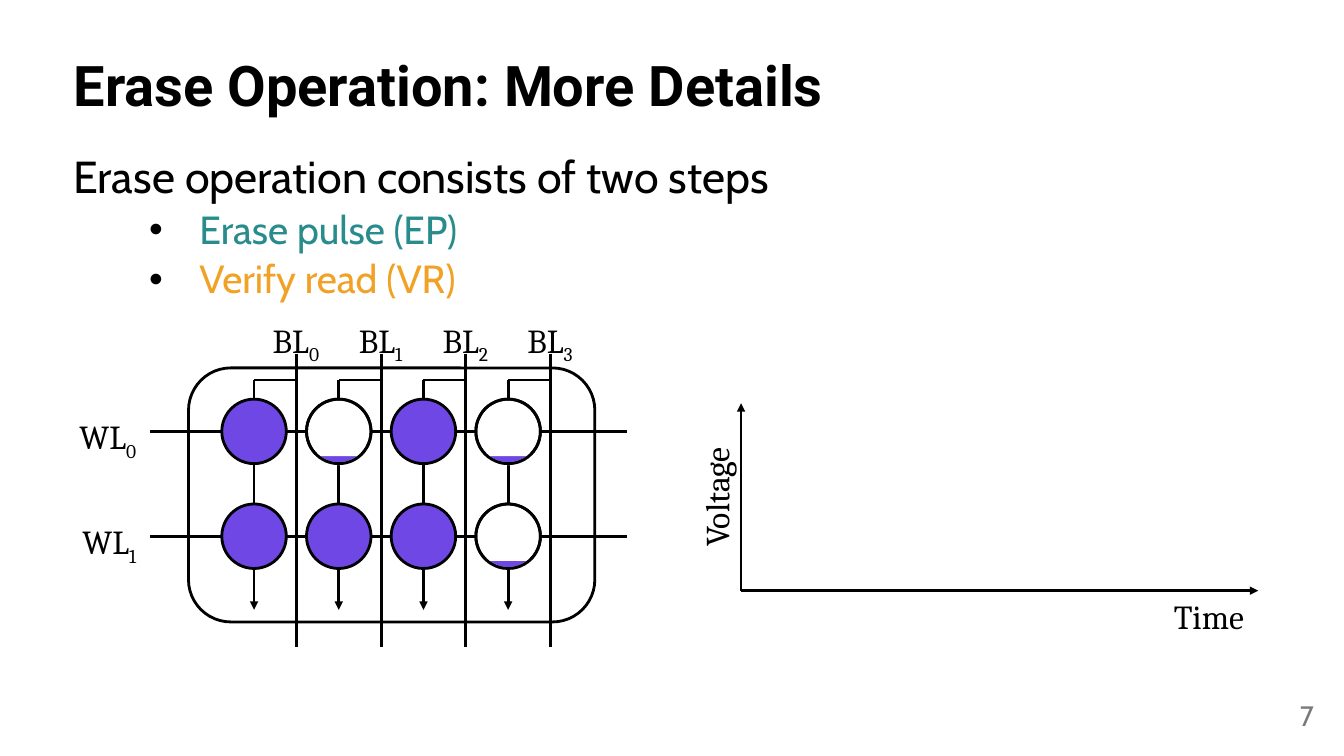
from math import acos, cos, pi, sin

from lxml import etree
from pptx import Presentation
from pptx.dml.color import RGBColor
from pptx.enum.shapes import MSO_CONNECTOR, MSO_SHAPE
from pptx.enum.text import MSO_ANCHOR as ANCHOR, MSO_AUTO_SIZE, PP_ALIGN as ALIGN
from pptx.oxml.ns import qn
from pptx.util import Inches, Pt

BLACK = RGBColor(0x00, 0x00, 0x00)
WHITE = RGBColor(0xFF, 0xFF, 0xFF)
GRAY = RGBColor(0x79, 0x79, 0x79)
TEAL = RGBColor(0x29, 0x8C, 0x8C)
ORANGE = RGBColor(0xF1, 0xA2, 0x26)
PURPLE = RGBColor(0x6F, 0x47, 0xE5)

# Content
TITLE = "Erase Operation: More Details"
LEAD = "Erase operation consists of two steps"
STEPS = [("Erase pulse (EP)", TEAL), ("Verify read (VR)", ORANGE)]
CELLS = [  # one row per word line, True for a fully charged cell
    [True, False, True, False],
    [True, True, True, False],
]
PAGE = "7"

# Cell array geometry in inches
CELL_X, CELL_Y = 2.52, 4.28  # centre of the first cell
STEP_X, STEP_Y = 0.84, 1.04
RADIUS = 0.32
CHARGE_DEPTH = 0.23  # centre of a cell to the top of its remaining charge
BIT_LINE_DX = 0.42
TAP_Y = 3.77
ORIGIN_X, ORIGIN_Y = 7.35, 5.86

prs = Presentation()
prs.slide_width, prs.slide_height = Inches(13.33), Inches(7.5)
s = prs.slides.add_slide(prs.slide_layouts[5])


def add_run(p, text, font="Cambria", size=24, color=BLACK, bold=False, baseline=None):
    r = p.add_run()
    r.text = text
    r.font.name, r.font.size, r.font.bold = font, Pt(size), bold
    r.font.color.rgb = color
    if baseline is not None:
        r.font._element.set("baseline", str(baseline))


def add_text(box, text, sub="", align=ALIGN.LEFT, anchor=ANCHOR.TOP, wrap=False,
             rotation=0, **fmt):
    """Write text, with an optional subscript, in a new box at (x, y, w, h)."""
    sp = s.shapes.add_textbox(*map(Inches, box))
    sp.rotation = rotation
    tf = sp.text_frame
    tf.word_wrap, tf.vertical_anchor = wrap, anchor
    p = tf.paragraphs[0]
    p.alignment = align
    add_run(p, text, **fmt)
    if sub:
        add_run(p, sub, baseline=-25000, **fmt)
    return tf


def add_line(x1, y1, x2, y2, arrow=False):
    line = s.shapes.add_connector(MSO_CONNECTOR.STRAIGHT, *map(Inches, (x1, y1, x2, y2)))
    line.line.color.rgb, line.line.width = BLACK, Pt(2)
    if arrow:
        etree.SubElement(line.line._get_or_add_ln(), qn("a:tailEnd"), type="triangle")
    etree.SubElement(line._element.spPr, qn("a:effectLst"))


def style(sp, fill=None, line=BLACK):
    sp.shadow.inherit = False
    if fill is None:
        sp.fill.background()
    else:
        sp.fill.solid()
        sp.fill.fore_color.rgb = fill
    sp.line.color.rgb, sp.line.width = line, Pt(2)


def add_circle(cx, cy, fill=None):
    box = (cx - RADIUS, cy - RADIUS, 2 * RADIUS, 2 * RADIUS)
    style(s.shapes.add_shape(MSO_SHAPE.OVAL, *map(Inches, box)), fill)


def add_charge(cx, cy):
    """Fill the bottom segment of a cell."""
    half = acos(CHARGE_DEPTH / RADIUS)
    angles = [pi / 2 - half + 2 * half * i / 16 for i in range(17)]
    arc = [(Inches(cx + RADIUS * cos(a)), Inches(cy + RADIUS * sin(a))) for a in angles]
    builder = s.shapes.build_freeform(*arc[0], scale=1.0)
    builder.add_line_segments(arc[1:], close=True)
    style(builder.convert_to_shape(), PURPLE, WHITE)


# Title
title = s.shapes.title
title.left, title.top, title.width, title.height = map(Inches, (0.63, 0.15, 12.08, 1.45))
tf = title.text_frame
tf.word_wrap, tf.vertical_anchor, tf.auto_size = True, ANCHOR.MIDDLE, MSO_AUTO_SIZE.NONE
p = tf.paragraphs[0]
p.alignment, p.line_spacing = ALIGN.LEFT, 0.9
add_run(p, TITLE, font="Roboto", size=40, bold=True)

# Body
tf = add_text((0.63, 1.49, 12.08, 5.46), LEAD, wrap=True, font="Cabin", size=32)
tf.paragraphs[0].line_spacing = 0.9
for text, color in STEPS:
    p = tf.add_paragraph()
    pPr = p._p.get_or_add_pPr()
    pPr.set("marL", str(Inches(1.25)))
    pPr.set("indent", str(Inches(-0.5)))
    bullet_color = etree.SubElement(pPr, qn("a:buClr"))
    etree.SubElement(bullet_color, qn("a:srgbClr"), val=str(BLACK))
    etree.SubElement(pPr, qn("a:buFont"), typeface="Arial")
    etree.SubElement(pPr, qn("a:buChar"), char="•")
    p.level, p.line_spacing, p.space_before = 1, 0.9, Pt(5)
    add_run(p, text, font="Cabin", size=28, color=color)

# Page number
add_text((10.13, 6.9, 3, 0.4), PAGE, align=ALIGN.RIGHT, anchor=ANCHOR.MIDDLE, wrap=True,
         font="Cabin", size=20, color=GRAY)

# Voltage and time axes
add_line(ORIGIN_X, ORIGIN_Y, ORIGIN_X, 4, arrow=True)
add_line(ORIGIN_X, ORIGIN_Y, 12.48, ORIGIN_Y, arrow=True)
add_text((6.47, 4.68, 1.26, 0.5), "Voltage", align=ALIGN.CENTER, anchor=ANCHOR.MIDDLE,
         rotation=270)
add_text((11.52, ORIGIN_Y, 0.94, 0.5), "Time", align=ALIGN.CENTER, anchor=ANCHOR.MIDDLE)

# Word lines
for row in range(len(CELLS)):
    y = CELL_Y + row * STEP_Y
    add_line(1.49, y, 6.22, y)
    add_text((0.63, y - 0.2, 0.82, 0.5), "WL", str(row), align=ALIGN.RIGHT)

# Cell strings and bit lines
for col in range(len(CELLS[0])):
    x = CELL_X + col * STEP_X
    bit_x = x + BIT_LINE_DX
    add_line(x, TAP_Y, x, 6.05, arrow=True)
    add_text((bit_x - 0.36, 3.12, 0.71, 0.5), "BL", str(col), align=ALIGN.CENTER)
    add_line(bit_x, 3.51, bit_x, 6.42)
    add_line(x, TAP_Y, bit_x, TAP_Y)

# Block outline
block = s.shapes.add_shape(MSO_SHAPE.ROUNDED_RECTANGLE,
                           *map(Inches, (1.87, 3.65, 4.03, 2.52)))
style(block)

# Cells
for row, states in enumerate(CELLS):
    for col, charged in enumerate(states):
        cx, cy = CELL_X + col * STEP_X, CELL_Y + row * STEP_Y
        add_circle(cx, cy, PURPLE if charged else WHITE)
        if not charged:
            add_charge(cx, cy)
            add_circle(cx, cy)

prs.save("out.pptx")
